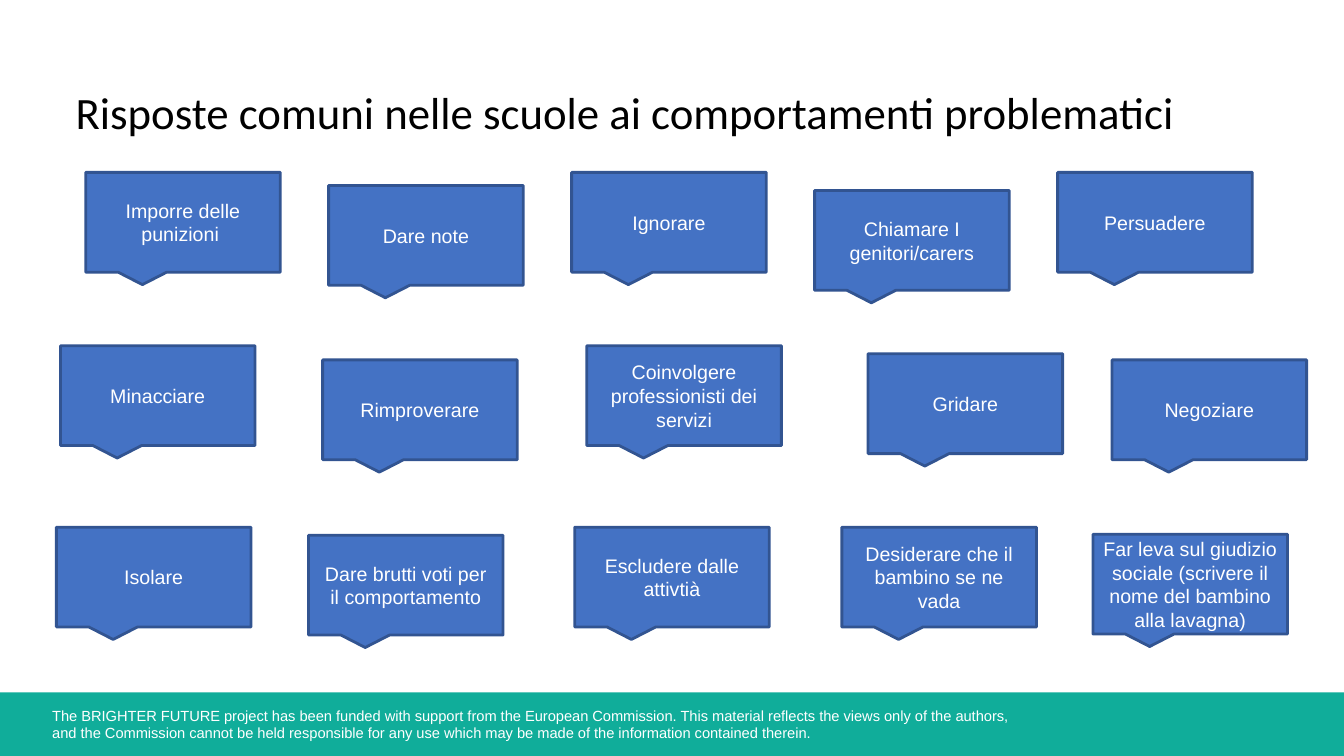
from dataclasses import dataclass

from pptx import Presentation
from pptx.dml.color import RGBColor
from pptx.enum.shapes import MSO_SHAPE as Preset
from pptx.enum.text import MSO_ANCHOR as Anchor, MSO_AUTO_SIZE as AutoSize, PP_ALIGN as Align
from pptx.util import Inches, Pt


@dataclass(frozen=True)
class Theme:
    teal: RGBColor = RGBColor(0x10, 0xAD, 0x9A)
    blue: RGBColor = RGBColor(0x44, 0x72, 0xC4)
    outline: RGBColor = RGBColor(0x32, 0x54, 0x91)
    white: RGBColor = RGBColor(0xFF, 0xFF, 0xFF)
    black: RGBColor = RGBColor(0, 0, 0)
    title_font: str = "Calibri"
    body_font: str = "Arial"
    title_size: Pt = Pt(32)
    callout_size: Pt = Pt(14)
    footer_size: Pt = Pt(10.5)
    outline_width: Pt = Pt(2)


theme = Theme()


def write(shape, text, font_name, size, color, align=Align.LEFT, anchor=Anchor.TOP):
    frame = shape.text_frame
    frame.word_wrap = True
    frame.auto_size = AutoSize.NONE
    frame.vertical_anchor = anchor
    frame.text = text
    paragraph = frame.paragraphs[0]
    paragraph.alignment = align
    paragraph.font.name = font_name
    paragraph.font.size = size
    paragraph.font.color.rgb = color


def add_block(preset, left, top, width, height, fill):
    shape = slide.shapes.add_shape(preset, Inches(left), Inches(top), Inches(width), Inches(height))
    shape.shadow.inherit = False
    shape.fill.solid()
    shape.fill.fore_color.rgb = fill
    return shape


presentation = Presentation()
presentation.slide_width = Inches(13.33)
presentation.slide_height = Inches(7.5)
slide = presentation.slides.add_slide(presentation.slide_layouts[5])

# Title
title = slide.shapes.title
title.left, title.top = Inches(0.65), Inches(0.79)
title.width, title.height = Inches(11.76), Inches(0.64)
write(title, "Risposte comuni nelle scuole ai comportamenti problematici",
      theme.title_font, theme.title_size, theme.black)

# Footer band with the funding notice
band = add_block(Preset.RECTANGLE, 0, 6.87, 13.33, 0.63, theme.teal)
band.line.fill.background()
notice = slide.shapes.add_textbox(Inches(0.42), Inches(6.96), Inches(10), Inches(0.45))
write(notice,
      "The BRIGHTER FUTURE project has been funded with support from the European Commission. "
      "This material reflects the views only of the authors, \v"
      "and the Commission cannot be held responsible for any use which may be made of the "
      "information contained therein.",
      theme.body_font, theme.footer_size, theme.white)

# Scattered callouts, row by row: left, top, response
callouts = [
    (0.85, 1.71, "Imporre delle punizioni "),
    (3.26, 1.84, "Dare note"),
    (5.67, 1.71, "Ignorare"),
    (8.08, 1.89, "Chiamare I genitori/carers"),
    (10.49, 1.71, "Persuadere"),
    (0.6, 3.43, "Minacciare"),
    (3.2, 3.57, "Rimproverare"),
    (5.82, 3.43, "Coinvolgere professionisti dei servizi"),
    (8.61, 3.51, "Gridare"),
    (11.03, 3.57, "Negoziare"),
    (0.56, 5.23, "Isolare"),
    (3.06, 5.31, "Dare brutti voti per il comportamento"),
    (5.7, 5.23, "Escludere dalle attivtià"),
    (8.35, 5.23, "Desiderare che il bambino se ne vada"),
    (10.84, 5.3, "Far leva sul giudizio sociale (scrivere il nome del bambino alla lavagna)"),
]
for left, top, response in callouts:
    callout = add_block(Preset.RECTANGULAR_CALLOUT, left, top, 1.93, 0.99, theme.blue)
    callout.line.color.rgb = theme.outline
    callout.line.width = theme.outline_width
    write(callout, response, theme.body_font, theme.callout_size, theme.white,
          Align.CENTER, Anchor.MIDDLE)

presentation.save("out.pptx")
